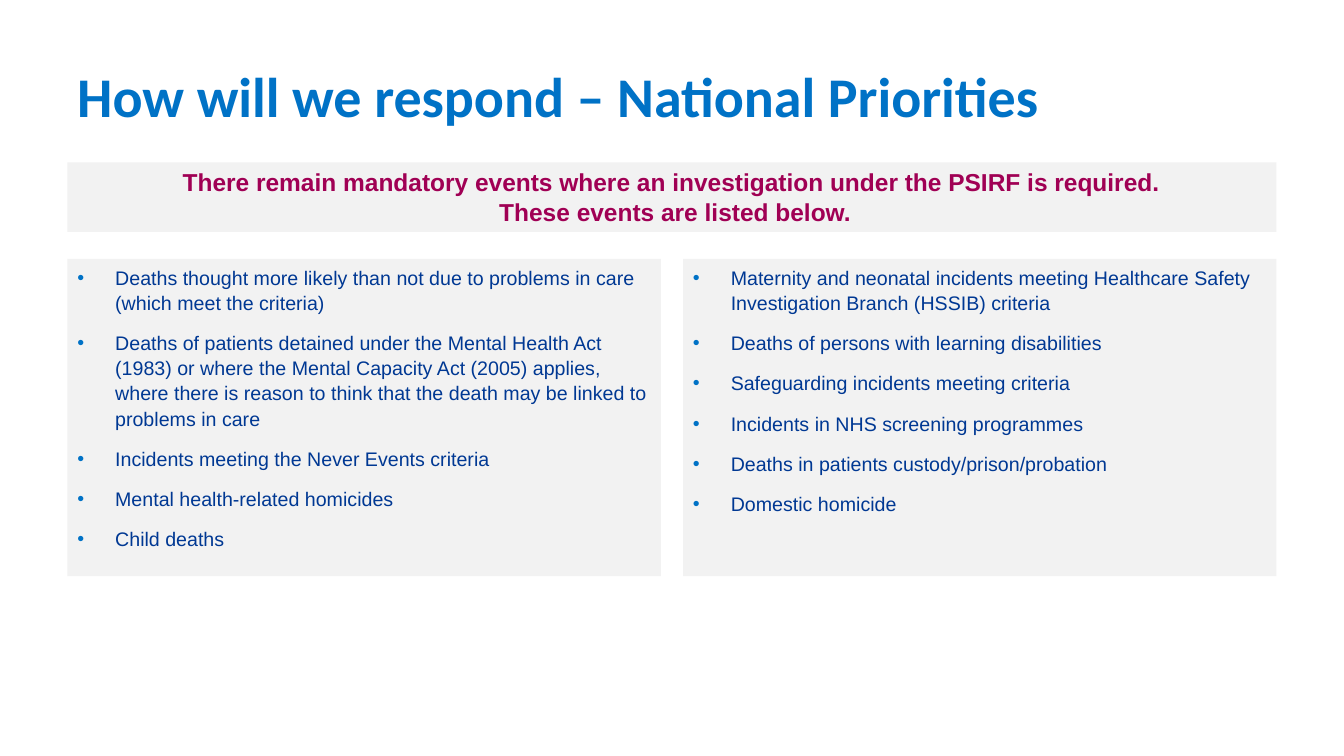
import pptx
import pptx.dml.color
import pptx.enum.shapes
import pptx.enum.text
import pptx.oxml
import pptx.oxml.ns
import pptx.util

Pt = pptx.util.Pt
ALIGN = pptx.enum.text.PP_ALIGN
ANCHOR = pptx.enum.text.MSO_ANCHOR

PANEL_GREY = "F2F2F2"
TITLE_BLUE = "0072C6"
TEXT_BLUE = "003893"
PLUM = "A00054"

LEFT, WIDTH, GUTTER = 48.2, 863.6, 15.8

CARE_EVENTS = [
    "Deaths thought more likely than not due to problems in care (which meet the criteria)",
    "Deaths of patients detained under the Mental Health Act (1983) or where the Mental Capacity Act (2005) "
    "applies, where there is reason to think that the death may be linked to problems in care",
    "Incidents meeting the Never Events criteria",
    "Mental health-related homicides",
    "Child deaths",
]
OTHER_EVENTS = [
    "Maternity and neonatal incidents meeting Healthcare Safety Investigation Branch (HSSIB) criteria",
    "Deaths of persons with learning disabilities",
    "Safeguarding incidents meeting criteria",
    "Incidents in NHS screening programmes",
    "Deaths in patients custody/prison/probation",
    "Domestic homicide",
]
MANDATE = [
    "There remain mandatory events where an investigation under the PSIRF is required.",
    " These events are listed below.",
]


def colour(hex_code):
    """Return the RGB colour for a hex string."""
    return pptx.dml.color.RGBColor.from_string(hex_code)


def add_run(paragraph, text, font_name, size, hex_code, bold=False):
    """Append one formatted run to a paragraph."""
    run = paragraph.add_run()
    run.text = text
    run.font.name = font_name
    run.font.size = Pt(size)
    run.font.bold = bold
    run.font.color.rgb = colour(hex_code)


def add_paragraphs(frame, texts):
    """Yield a paragraph of the frame with each text."""
    for index, text in enumerate(texts):
        yield (frame.add_paragraph() if index else frame.paragraphs[0]), text


def add_bullet(paragraph):
    """Give a paragraph a hanging blue bullet."""
    properties = paragraph._p.get_or_add_pPr()
    properties.set("marL", str(Pt(27)))
    properties.set("indent", str(-Pt(27)))
    namespace = pptx.oxml.ns.nsdecls("a")
    for element in (
        f'<a:buClr {namespace}><a:srgbClr val="{TITLE_BLUE}"/></a:buClr>',
        f'<a:buFont {namespace} typeface="Arial"/>',
        f'<a:buChar {namespace} char="•"/>',
    ):
        properties.append(pptx.oxml.parse_xml(element))


def add_panel(slide, left, top, width, height, anchor):
    """Add a grey panel and return its text frame."""
    panel = slide.shapes.add_shape(
        pptx.enum.shapes.MSO_SHAPE.RECTANGLE, Pt(left), Pt(top), Pt(width), Pt(height)
    )
    panel.shadow.inherit = False
    panel.fill.solid()
    panel.fill.fore_color.rgb = colour(PANEL_GREY)
    panel.line.fill.background()
    panel.text_frame.word_wrap = True
    panel.text_frame.vertical_anchor = anchor
    return panel.text_frame


def set_title(slide, left, top, width, height, text):
    """Place and format the slide title."""
    title = slide.shapes.title
    title.left, title.top, title.width, title.height = map(Pt, (left, top, width, height))
    title.text_frame.vertical_anchor = ANCHOR.MIDDLE
    heading = title.text_frame.paragraphs[0]
    heading.alignment = ALIGN.CENTER
    heading.line_spacing = 0.9
    heading.space_after = Pt(6)
    add_run(heading, text, "Calibri", 40, TITLE_BLUE, bold=True)


def add_mandate(slide, left, top, width, height, sentences):
    """Add the banner that introduces the lists."""
    frame = add_panel(slide, left, top, width, height, ANCHOR.TOP)
    for paragraph, sentence in add_paragraphs(frame, sentences):
        paragraph.alignment = ALIGN.CENTER
        add_run(paragraph, sentence, "Arial", 17.5, PLUM, bold=True)


def add_event_list(slide, left, top, width, height, events):
    """Add one panel of bulleted events."""
    frame = add_panel(slide, left, top, width, height, ANCHOR.TOP)
    for paragraph, event in add_paragraphs(frame, events):
        add_bullet(paragraph)
        paragraph.alignment = ALIGN.LEFT
        paragraph.line_spacing = 1.07
        paragraph.space_before = Pt(0 if event == events[0] else 2.8)
        paragraph.space_after = Pt(8)
        add_run(paragraph, event, "Arial", 14, TEXT_BLUE)


def main():
    """Build and save the presentation."""
    deck = pptx.Presentation()
    deck.slide_width, deck.slide_height = Pt(960), Pt(540)
    slide = deck.slides.add_slide(deck.slide_layouts[5])
    set_title(slide, 2, 26, 793, 90, "How will we respond – National Priorities")
    add_mandate(slide, LEFT, 116, WIDTH, 49.7, MANDATE)
    column_width = (WIDTH - GUTTER) / 2
    for column, events in enumerate((CARE_EVENTS, OTHER_EVENTS)):
        column_left = LEFT + column * (column_width + GUTTER)
        add_event_list(slide, column_left, 185, column_width, 226.6, events)
    deck.save("out.pptx")


if __name__ == "__main__":
    main()
